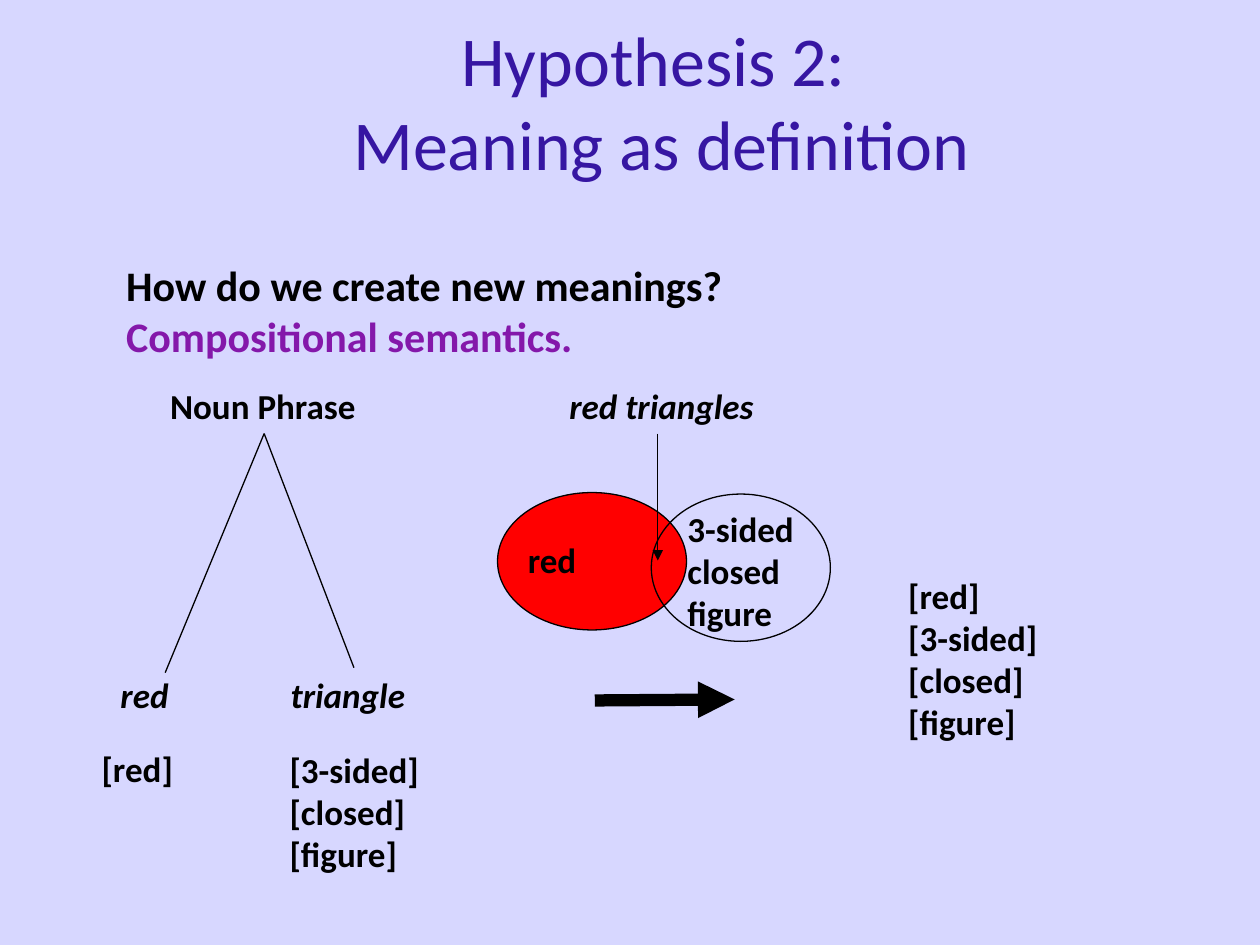
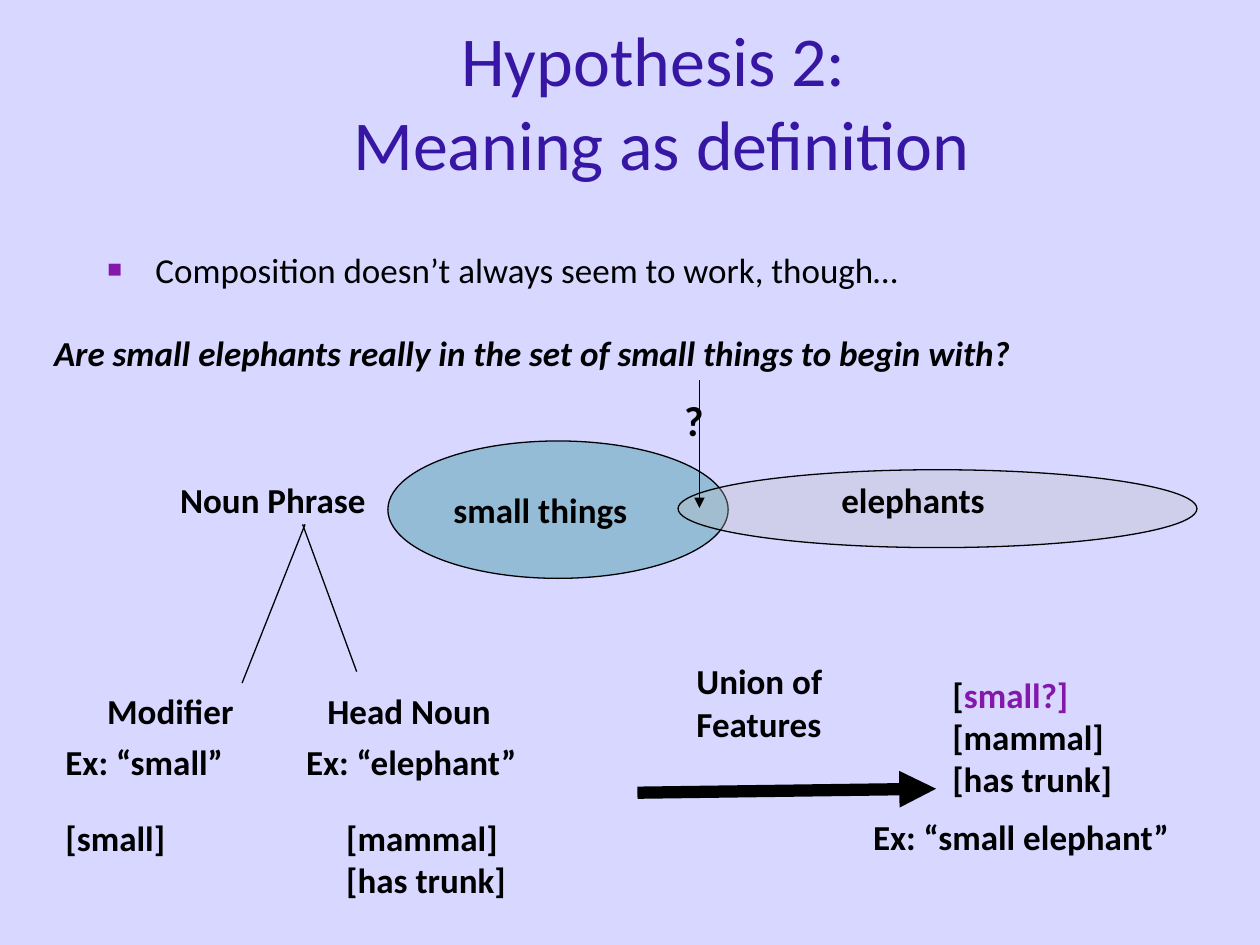
from dataclasses import dataclass

from lxml.etree import SubElement
from pptx import Presentation
from pptx.dml.color import RGBColor
from pptx.enum.shapes import MSO_CONNECTOR, MSO_SHAPE
from pptx.enum.text import MSO_ANCHOR, MSO_AUTO_SIZE, PP_ALIGN
from pptx.oxml.ns import qn
from pptx.util import Cm, Pt

OVAL, LINE = MSO_SHAPE.OVAL, MSO_CONNECTOR.STRAIGHT
MIDDLE, CENTER = MSO_ANCHOR.MIDDLE, PP_ALIGN.CENTER
GROW, FIXED = MSO_AUTO_SIZE.SHAPE_TO_FIT_TEXT, MSO_AUTO_SIZE.NONE
TOP, BOTTOM = 0, 2


@dataclass(frozen=True)
class Theme:
    font: str = "Calibri"
    ground: str = "D7D7FF"
    title: str = "3616A2"
    ink: str = "000000"
    accent: str = "8418AA"
    head: int = 40
    large: int = 24
    text: int = 20
    thin: float = 0.75
    thick: float = 7


THEME = Theme()
BOLD = {"bold": True}
SLANT = {"bold": True, "italic": True}
BIG = {"bold": True, "size": Pt(THEME.large)}
ACCENT = THEME.accent

# Content: lengths in cm; a line of text is a string or a list of (text, colour)
TITLE = ["Hypothesis 2: ", "Meaning as definition"]
TITLE_BOX = (1.27, 0.43, 24.13, 3.18)

SLIDES = [
    {
        "body": {
            "box": (2.29, 5.11, 22.5, 2.31),
            "lines": ["How do we create new meanings?",
                      [("Compositional semantics.", ACCENT)]],
            "style": BIG, "bullet": None,
        },
        # place, fill, opacity in percent
        "ovals": [
            ((10.03, 9.93, 3.81, 2.77), "FF0000", 100),
            ((13.13, 9.96, 3.61, 2.97), None, 100),
        ],
        # name, left, top, width, lines, style
        "labels": [
            ("phrase", 3.18, 7.62, 4.29, ["Noun Phrase"], BOLD),
            ("red", 2.18, 13.46, 1.65, ["red"], SLANT),
            ("noun", 5.61, 13.46, 3.05, ["triangle"], SLANT),
            ("set", 10.39, 10.74, 1.5, ["red"], BOLD),
            ("sides", 13.61, 10.11, 2.77, ["3-sided", "closed", "figure"], BOLD),
            ("both", 11.23, 7.62, 4.42, ["red triangles"], SLANT),
            ("trait", 1.8, 14.94, 1.98, ["[red]"], BOLD),
            ("traits", 5.59, 14.96, 3.25,
             ["[3-sided]", "[closed]", "[figure]"], BOLD),
            ("union", 18.06, 11.46, 3.25,
             ["[red]", "[3-sided]", "[closed]", "[figure]"], BOLD),
        ],
        # start, end, width, arrow; an end is a point or a (label, side) pair
        "lines": [
            (("phrase", BOTTOM), (3.33, 13.56), THEME.thin, False),
            (("phrase", BOTTOM), ("noun", TOP), THEME.thin, False),
            ((11.99, 14.12), (14.81, 14.1), THEME.thick, True),
            ((13.26, 8.74), (13.26, 11.3), THEME.thin, True),
        ],
    },
    {
        "body": {
            "box": (1.91, 4.88, 20.96, 11.43),
            "lines": ["Composition doesn’t always seem to work, though…"],
            "style": {}, "bullet": "■",
        },
        "ovals": [
            ((7.82, 8.89, 6.86, 2.77), "098681", 32),
            ((13.67, 9.47, 10.46, 1.57), "C0C0C0", 31),
        ],
        "labels": [
            ("ask", 0.84, 6.55, 20.14,
             ["Are small elephants really in the set of small things to begin with?"],
             SLANT),
            ("doubt", 13.54, 7.82, 0.91, ["?"], BIG),
            ("phrase", 3.38, 9.53, 4.29, ["Noun Phrase"], BOLD),
            ("small", 8.89, 9.73, 4.04, ["small things"], BOLD),
            ("herd", 16.71, 9.53, 3.43, ["elephants"], BOLD),
            ("mod", 1.91, 13.77, 3.07, ["Modifier"], BOLD),
            ("noun", 6.35, 13.77, 3.84, ["Head Noun"], BOLD),
            ("mod case", 1.07, 14.81, 3.73, ["Ex: “small”"], BOLD),
            ("noun case", 5.92, 14.81, 4.8, ["Ex: “elephant”"], BOLD),
            ("trait", 1.07, 16.33, 2.54, ["[small]"], BOLD),
            ("traits", 6.73, 16.33, 3.76, ["[mammal]", "[has trunk]"], BOLD),
            ("rule", 13.79, 13.18, 3.94, ["Union of Features"], BOLD),
            ("union", 18.95, 13.46, 3.76,
             [[("[", THEME.ink), ("small?]", ACCENT)], "[mammal]", "[has trunk]"],
             BOLD),
            ("case", 17.35, 16.31, 6.53, ["Ex: “small elephant”"], BOLD),
        ],
        "lines": [
            ((6.15, 10.57), (4.88, 13.77), THEME.thin, False),
            ((6.1, 10.57), (7.19, 13.54), THEME.thin, False),
            ((12.85, 15.98), (18.87, 15.9), THEME.thick, True),
            ((14.1, 7.67), (14.1, 10.24), THEME.thin, True),
        ],
    },
]
WRAPPED = {"rule"}


# Text helpers
def style(font, color, extra):
    font.color.rgb = RGBColor.from_string(color)
    base = {"name": THEME.font, "size": Pt(THEME.text)}
    for key, value in {**base, **extra}.items():
        setattr(font, key, value)


def write(frame, lines, look):
    for n, line in enumerate(lines):
        para = frame.add_paragraph() if n else frame.paragraphs[0]
        parts = [(line, THEME.ink)] if isinstance(line, str) else line
        for text, color in parts:
            run = para.add_run()
            run.text = text
            style(run.font, color, look)


def place(shape, box):
    for key, value in zip(("left", "top", "width", "height"), box):
        setattr(shape, key, Cm(value))


def mark(para, sign):
    """Give a paragraph a square bullet, or none."""
    para.space_before = Pt(THEME.text * 0.2 if sign else 0)
    prop = para._p.get_or_add_pPr()
    hang = Cm(0.97) if sign else 0
    prop.set("marL", str(hang))
    prop.set("indent", str(-hang))
    if not sign:
        SubElement(prop, qn("a:buNone"))
        return
    tint = SubElement(prop, qn("a:buClr"))
    SubElement(tint, qn("a:srgbClr"), val=ACCENT)
    SubElement(prop, qn("a:buSzPct"), val="70000")
    SubElement(prop, qn("a:buChar"), char=sign)


# Slide parts
def add_title(slide):
    shape = slide.shapes.title
    place(shape, TITLE_BOX)
    frame = shape.text_frame
    frame.auto_size, frame.vertical_anchor = FIXED, MIDDLE
    para = frame.paragraphs[0]
    para.alignment = CENTER
    for n, text in enumerate(TITLE):
        if n:
            para.add_line_break()
        run = para.add_run()
        run.text = text
        style(run.font, THEME.title, {"size": Pt(THEME.head)})


def add_body(slide, body):
    shape = slide.placeholders[1]
    place(shape, body["box"])
    frame = shape.text_frame
    frame.auto_size = FIXED
    write(frame, body["lines"], body["style"])
    for para in frame.paragraphs:
        mark(para, body["bullet"])


def add_oval(slide, box, fill, alpha):
    shape = slide.shapes.add_shape(OVAL, *map(Cm, box))
    shape.shadow.inherit = False
    shape.line.color.rgb = RGBColor.from_string(THEME.ink)
    shape.line.width = Pt(THEME.thin)
    if fill is None:
        shape.fill.background()
        return
    shape.fill.solid()
    shape.fill.fore_color.rgb = RGBColor.from_string(fill)
    if alpha < 100:
        tint = shape._element.spPr.find(qn("a:solidFill"))[0]
        SubElement(tint, qn("a:alpha"), val=str(alpha * 1000))


def add_label(slide, name, left, top, width, lines, look):
    rows = 2 if name in WRAPPED else len(lines)
    size = look.get("size", Pt(THEME.text)).pt
    high = 0.27 + rows * size * 0.0425
    shape = slide.shapes.add_textbox(*map(Cm, (left, top, width, high)))
    frame = shape.text_frame
    frame.word_wrap, frame.auto_size = name in WRAPPED, GROW
    write(frame, lines, look)
    return shape


def add_line(slide, start, end, width, arrow, labels):
    ends = [(0, 0) if isinstance(p[0], str) else p for p in (start, end)]
    link = slide.shapes.add_connector(LINE, *map(Cm, ends[0] + ends[1]))
    for point, join in ((start, link.begin_connect), (end, link.end_connect)):
        if isinstance(point[0], str):
            join(labels[point[0]], point[1])
    link.line.color.rgb = RGBColor.from_string(THEME.ink)
    link.line.width = Pt(width)
    prop = link._element.spPr
    if arrow:
        SubElement(prop.find(qn("a:ln")), qn("a:tailEnd"), type="triangle")
    SubElement(prop, qn("a:effectLst"))


def main():
    deck = Presentation()
    deck.slide_width, deck.slide_height = Cm(25.4), Cm(19.05)
    ground = deck.slide_master.background.fill
    ground.solid()
    ground.fore_color.rgb = RGBColor.from_string(THEME.ground)
    for data in SLIDES:
        slide = deck.slides.add_slide(deck.slide_layouts[1])
        add_title(slide)
        add_body(slide, data["body"])
        for oval in data["ovals"]:
            add_oval(slide, *oval)
        labels = {row[0]: add_label(slide, *row) for row in data["labels"]}
        for line in data["lines"]:
            add_line(slide, *line, labels)
    deck.save("out.pptx")


if __name__ == "__main__":
    main()
